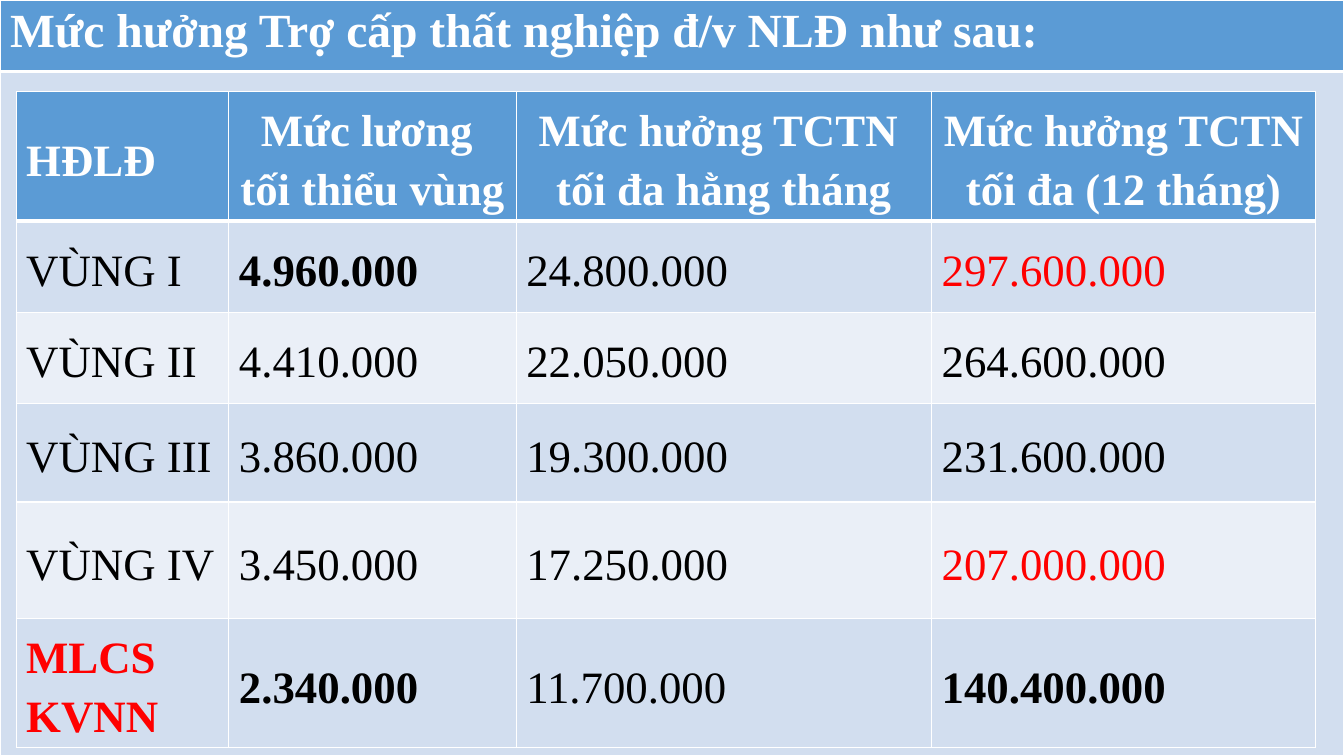
from lxml import etree
from pptx import Presentation
from pptx.dml.color import RGBColor
from pptx.enum.text import MSO_ANCHOR, PP_ALIGN
from pptx.oxml.ns import qn
from pptx.util import Inches, Pt

COLORS = {"header": "5B9BD5", "band": "D2DEEF", "light": "EAEFF7",
          "white": "FFFFFF", "black": "000000", "red": "FF0000"}
FONT = "Times New Roman"


def add_grid(slide, left, top, widths, heights):
    grid = slide.shapes.add_table(
        len(heights), len(widths), Inches(left), Inches(top),
        Inches(sum(widths)), Inches(sum(heights))).table
    for column, width in zip(grid.columns, widths):
        column.width = Inches(width)
    for row, height in zip(grid.rows, heights):
        row.height = Inches(height)
    for r in range(len(heights)):
        fill = "header" if r == 0 else "band" if r % 2 else "light"
        edges = {"lnL": 1, "lnR": 1, "lnT": 3 if r == 1 else 1, "lnB": 3 if r == 0 else 1}
        for c in range(len(widths)):
            cell = grid.cell(r, c)
            properties = cell._tc.get_or_add_tcPr()
            for edge, points in edges.items():
                line = etree.SubElement(properties, qn(f"a:{edge}"), w=str(Pt(points)))
                solid = etree.SubElement(line, qn("a:solidFill"))
                etree.SubElement(solid, qn("a:srgbClr"), val=COLORS["white"])
            cell.fill.solid()
            cell.fill.fore_color.rgb = RGBColor.from_string(COLORS[fill])
    return grid


def write_cell(cell, text, size, color, bold):
    cell.text_frame.text = text
    for paragraph in cell.text_frame.paragraphs:
        for run in paragraph.runs:
            run.font.name = FONT
            run.font.size = Pt(size)
            run.font.bold = bold
            run.font.color.rgb = RGBColor.from_string(COLORS[color])


prs = Presentation()
prs.slide_width = Inches(13.33)
prs.slide_height = Inches(7.5)
slide = prs.slides.add_slide(prs.slide_layouts[6])

frame = add_grid(slide, 0, 0, [13.33], [0.71, 6.79])
write_cell(frame.cell(0, 0), "Mức hưởng Trợ cấp thất nghiệp đ/v NLĐ như sau:", 34, "white", True)

benefit_rows = [
    ["HĐLĐ", "Mức lương \ntối thiểu vùng", "Mức hưởng TCTN \ntối đa hằng tháng",
     "Mức hưởng TCTN tối đa (12 tháng)"],
    ["VÙNG I", "4.960.000", "24.800.000", "297.600.000"],
    ["VÙNG II", "4.410.000", "22.050.000", "264.600.000"],
    ["VÙNG III", "3.860.000", "19.300.000", "231.600.000"],
    ["VÙNG IV", "3.450.000", "17.250.000", "207.000.000"],
    ["MLCS\nKVNN", "2.340.000", "11.700.000", "140.400.000"],
]
red_cells = {(1, 3), (4, 3), (5, 0)}
bold_cells = {(1, 1), (5, 0), (5, 1), (5, 3)}

benefits = add_grid(slide, 0.16, 0.91, [2.11, 2.85, 4.12, 3.81],
                    [1.28, 0.91, 0.9, 0.98, 1.16, 1.28])
for r, values in enumerate(benefit_rows):
    for c, value in enumerate(values):
        cell = benefits.cell(r, c)
        color = "white" if r == 0 else "red" if (r, c) in red_cells else "black"
        write_cell(cell, value, 32, color, r == 0 or (r, c) in bold_cells)
        cell.vertical_anchor = MSO_ANCHOR.MIDDLE
        for paragraph in cell.text_frame.paragraphs:
            paragraph.line_spacing = Pt(42.4)
            paragraph.alignment = PP_ALIGN.CENTER if r == 0 and c > 0 else PP_ALIGN.LEFT

prs.save("out.pptx")
